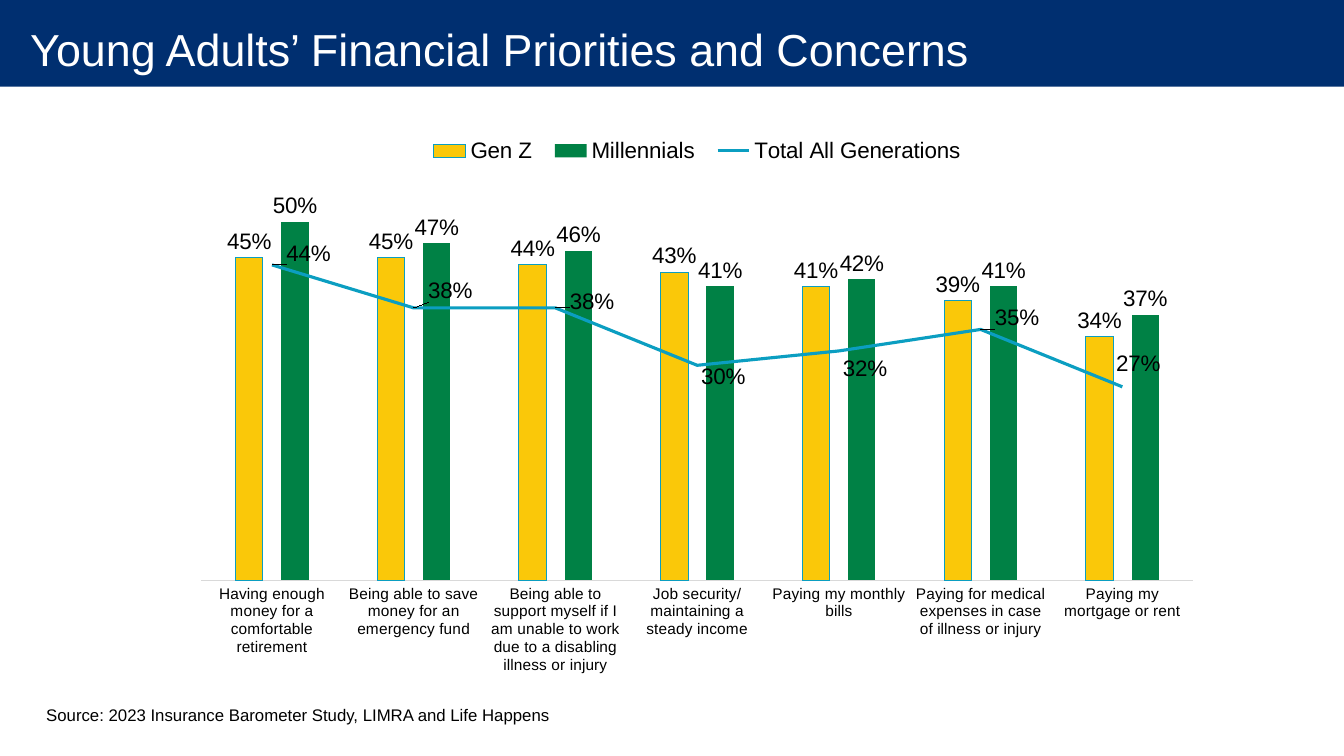
from lxml import etree
from pptx import Presentation
from pptx.chart.data import CategoryChartData
from pptx.dml.color import RGBColor
from pptx.enum import chart as ch, shapes, text
from pptx.oxml import ns, xmlchemy
from pptx.util import Inches, Pt


def style_font(font, size, color="000000"):
    font.name = "Arial"
    font.size = Pt(size)
    font.color.rgb = RGBColor.from_string(color)


def manual_layout(parent, position, **values):
    """Put a c:layout child at the given position, in place of any old one."""
    for old_layout in parent.findall(ns.qn("c:layout")):
        parent.remove(old_layout)
    layout = xmlchemy.OxmlElement("c:layout")
    manual = etree.SubElement(layout, ns.qn("c:manualLayout"))
    for tag, value in values.items():
        etree.SubElement(manual, ns.qn("c:" + tag)).set("val", str(value))
    parent.insert(position, layout)


prs = Presentation()
prs.slide_width, prs.slide_height = Inches(13.33), Inches(7.5)
slide = prs.slides.add_slide(prs.slide_layouts[5])

# Title over a full-width band
title = slide.shapes.title
band = slide.shapes.add_shape(shapes.MSO_SHAPE.RECTANGLE, 0, 0, prs.slide_width, Inches(0.86))
band.shadow.inherit = False
band.fill.solid()
band.fill.fore_color.rgb = RGBColor.from_string("002F70")
band.line.fill.background()
title._element.addprevious(band._element)

title.left, title.top, title.width, title.height = 0, 0, prs.slide_width, Inches(0.97)
heading = title.text_frame
heading.margin_left, heading.margin_right = Inches(0.3), Inches(0.2)
heading.margin_top = heading.margin_bottom = 0
heading.vertical_anchor = text.MSO_ANCHOR.MIDDLE
heading.word_wrap = False
heading.auto_size = text.MSO_AUTO_SIZE.NONE
heading.paragraphs[0].alignment = text.PP_ALIGN.LEFT
heading_run = heading.paragraphs[0].add_run()
heading_run.text = "Young Adults’ Financial Priorities and Concerns"
style_font(heading_run.font, 32, "FFFFFF")

# Columns per generation, with the overall share as a line
priorities = CategoryChartData(number_format="0%")
priorities.categories = [
    "Having enough money for a comfortable retirement",
    "Being able to save money for an emergency fund",
    "Being able to support myself if I am unable to work due to a disabling illness or injury",
    "Job security/maintaining a steady income",
    "Paying my monthly bills",
    "Paying for medical expenses in case of illness or injury",
    "Paying my mortgage or rent",
]
priorities.add_series("Gen Z", [0.45, 0.45, 0.44, 0.43, 0.41, 0.39, 0.34])
priorities.add_series("Millennials", [0.5, 0.47, 0.46, 0.41, 0.42, 0.41, 0.37])
priorities.add_series("Total All Generations", [0.44, 0.38, 0.38, 0.3, 0.32, 0.35, 0.27])
chart = slide.shapes.add_chart(
    ch.XL_CHART_TYPE.COLUMN_CLUSTERED,
    Inches(1.79), Inches(0.97), Inches(10.25), Inches(5.84), priorities).chart
style_font(chart.font, 10)
chart.has_title = False

chart.has_legend = True
chart.legend.position = ch.XL_LEGEND_POSITION.TOP
chart.legend.include_in_layout = False
style_font(chart.legend.font, 16)

chart.value_axis.minimum_scale, chart.value_axis.maximum_scale = 0, 0.55
chart.value_axis.has_major_gridlines = False
chart.value_axis.tick_labels.number_format = "0%"
chart.value_axis.tick_labels.number_format_is_linked = False
chart.value_axis.visible = False
chart.category_axis.major_tick_mark = ch.XL_TICK_MARK.NONE
chart.category_axis.format.line.color.rgb = RGBColor.from_string("D9D9D9")
chart.category_axis.format.line.width = Pt(0.75)
style_font(chart.category_axis.tick_labels.font, 11)

# Move the third series into a line chart on the same axes
columns = chart.plots[0]
columns.gap_width, columns.overlap = 250, -67
columns.vary_by_categories = False
column_xml = columns._element
total_xml = column_xml.findall(ns.qn("c:ser"))[2]
for bar_only in total_xml.findall(ns.qn("c:invertIfNegative")):
    total_xml.remove(bar_only)
line_xml = xmlchemy.OxmlElement("c:lineChart")
etree.SubElement(line_xml, ns.qn("c:grouping")).set("val", "standard")
etree.SubElement(line_xml, ns.qn("c:varyColors")).set("val", "0")
line_xml.append(total_xml)
for axis_id in column_xml.findall(ns.qn("c:axId")):
    etree.SubElement(line_xml, ns.qn("c:axId")).set("val", axis_id.get("val"))
column_xml.addnext(line_xml)

gen_z, millennials = columns.series
total = chart.plots[1].series[0]
for generation, color in ((gen_z, "FAC809"), (millennials, "008145")):
    generation.format.fill.solid()
    generation.format.fill.fore_color.rgb = RGBColor.from_string(color)
gen_z.format.line.color.rgb = RGBColor.from_string("0B9EC1")
gen_z.format.line.width = Pt(0)
millennials.format.line.fill.background()
total.format.line.color.rgb = RGBColor.from_string("0B9EC1")
total.format.line.width = Pt(2.25)
total.marker.style = ch.XL_MARKER_STYLE.NONE
total.smooth = False

above, beside = ch.XL_LABEL_POSITION.OUTSIDE_END, ch.XL_LABEL_POSITION.RIGHT
for series, side in ((gen_z, above), (millennials, above), (total, beside)):
    labels = series.data_labels
    labels.show_value = True
    labels.number_format = "0%"
    labels.number_format_is_linked = False
    labels.position = side
    style_font(labels.font, 16)

# Shifts of the line's labels, as fractions of the chart size
label_shifts = [(0.01, -0.02), (0.01, -0.03), (0.01, -0.01), (0, 0.02),
                (0, 0.03), (0.01, -0.02), (-0.01, -0.04)]
for index, (right, down) in enumerate(label_shifts):
    label = total.points[index].data_label
    label.position = beside
    style_font(label.font, 16)
    label_xml = total_xml.findall(".//" + ns.qn("c:dLbl"))[index]
    manual_layout(label_xml, 1, x=right, y=down)

manual_layout(column_xml.getparent(), 0, layoutTarget="inner", xMode="edge", yMode="edge",
              x=0.02, y=0.15, w=0.96, h=0.67)
manual_layout(chart.legend._element, 1, xMode="edge", yMode="edge",
              x=0.23, y=0.06, w=0.54, h=0.06)

# Source line
source = slide.shapes.add_textbox(Inches(0.36), Inches(6.94), Inches(5.24), Inches(0.3)).text_frame
source.word_wrap = False
source.auto_size = text.MSO_AUTO_SIZE.SHAPE_TO_FIT_TEXT
source_run = source.paragraphs[0].add_run()
source_run.text = "Source: 2023 Insurance Barometer Study, LIMRA and Life Happens"
style_font(source_run.font, 12)

prs.save("out.pptx")
